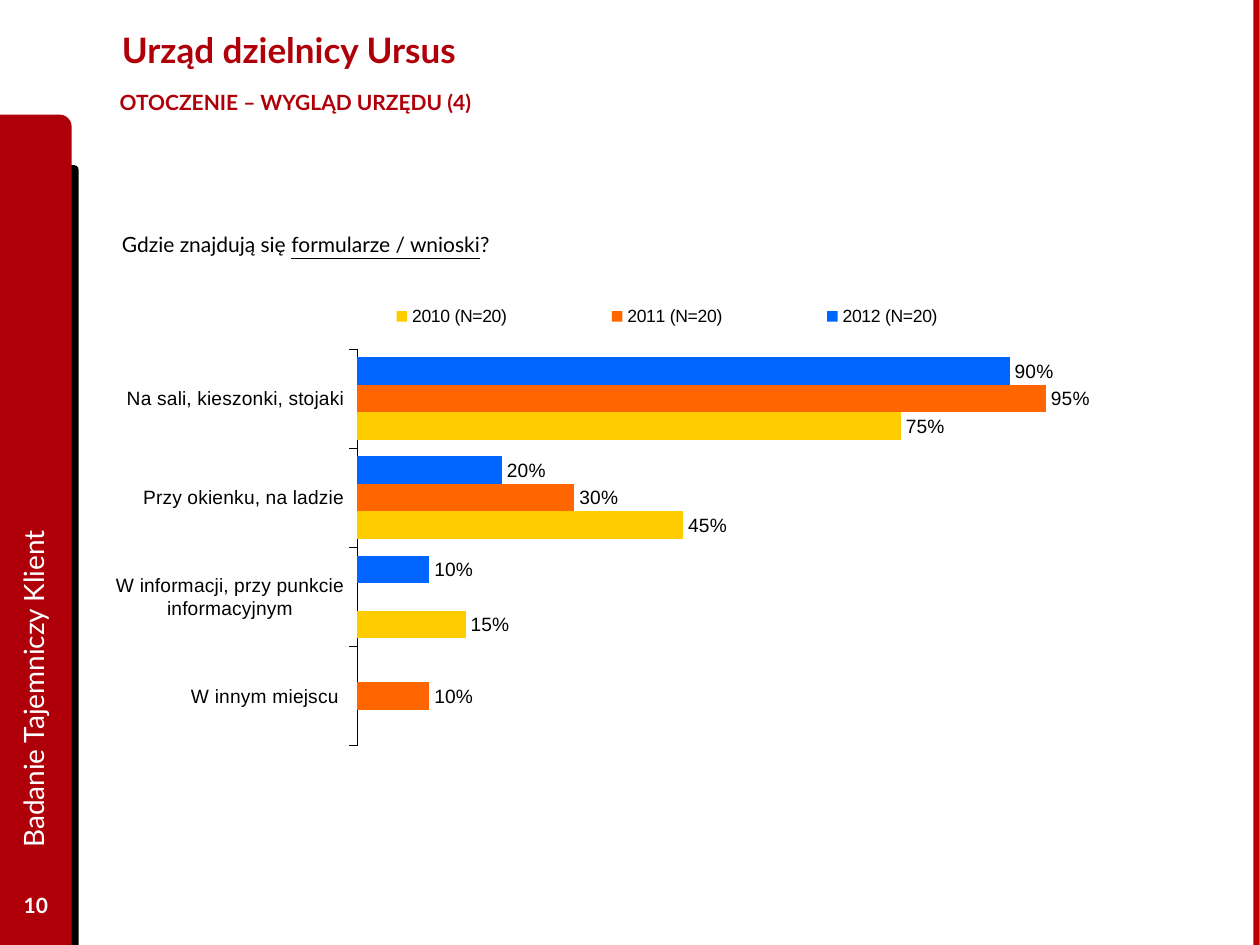
from lxml.etree import SubElement
from pptx import Presentation
from pptx.chart.data import CategoryChartData
from pptx.dml.color import RGBColor
from pptx.enum.chart import (XL_CHART_TYPE, XL_LABEL_POSITION, XL_LEGEND_POSITION,
                             XL_TICK_MARK)
from pptx.enum.shapes import MSO_SHAPE
from pptx.enum.text import MSO_ANCHOR, PP_ALIGN
from pptx.oxml import parse_xml
from pptx.oxml.ns import nsdecls, qn
from pptx.util import Pt

RED, BLACK, WHITE = "AF000A", "000000", "FFFFFF"
CATEGORIES = ["Na sali, kieszonki, stojaki", "Przy okienku, na ladzie",
              "W informacji, przy punkcie informacyjnym", "W innym miejscu "]
SERIES = [
    ("2012 (N=20)", [0.9, 0.2, 0.1, None], "0066FF"),
    ("2011 (N=20)", [0.95, 0.3, None, 0.1], "FF6600"),
    ("2010 (N=20)", [0.75, 0.45, 0.15, None], "FFCC00"),
]


def paint(color_format, color):
    color_format.rgb = RGBColor.from_string(color)


def manual_layout(x, y, width, height, inner=False):
    """Return a chart layout element placed by fractions of the chart area."""
    layout = parse_xml(f"<c:layout {nsdecls('c')}><c:manualLayout/></c:layout>")
    settings = [("layoutTarget", "inner")] if inner else []
    settings += [("xMode", "edge"), ("yMode", "edge"),
                 ("x", x), ("y", y), ("w", width), ("h", height)]
    for name, value in settings:
        SubElement(layout[0], qn(f"c:{name}")).set("val", str(value))
    return layout


class SlideBuilder:
    def __init__(self, slide, text_font="Lato", chart_font="Arial"):
        self.slide = slide
        self.text_font = text_font
        self.chart_font = chart_font

    def style(self, font, name, size, color, bold=False):
        font.name, font.size, font.bold = name, Pt(size), bold
        paint(font.color, color)

    def panel(self, kind, left, top, width, height, color):
        shape = self.slide.shapes.add_shape(kind, Pt(left), Pt(top), Pt(width), Pt(height))
        shape.shadow.inherit = False
        shape.fill.solid()
        paint(shape.fill.fore_color, color)
        shape.line.fill.background()

    def text(self, left, top, width, height, spans, size, color, bold=False,
             anchor=MSO_ANCHOR.TOP, align=PP_ALIGN.LEFT, wrap=True, side_inset=7.2,
             rotation=0):
        """Add one paragraph; spans are (text, underlined) pairs."""
        box = self.slide.shapes.add_textbox(Pt(left), Pt(top), Pt(width), Pt(height))
        box.rotation = rotation
        frame = box.text_frame
        frame.word_wrap = wrap
        frame.vertical_anchor = anchor
        frame.margin_left = frame.margin_right = Pt(side_inset)
        para = frame.paragraphs[0]
        para.alignment = align
        for content, underlined in spans:
            span = para.add_run()
            span.text = content
            self.style(span.font, self.text_font, size, color, bold)
            if underlined:
                span.font.underline = True

    def bar_chart(self, left, top, width, height, categories, series_rows):
        data = CategoryChartData(number_format="0%")
        data.categories = categories
        for name, values, _ in series_rows:
            data.add_series(name, values)
        chart = self.slide.shapes.add_chart(
            XL_CHART_TYPE.BAR_CLUSTERED, Pt(left), Pt(top), Pt(width), Pt(height), data).chart
        self.style(chart.font, self.chart_font, 11, BLACK)
        chart.has_title = False
        self.axes(chart)
        self.legend(chart)

        plot = chart.plots[0]
        plot.gap_width, plot.overlap = 60, 0
        plot.vary_by_categories = False
        for series, (_, _, color) in zip(plot.series, series_rows):
            series.format.fill.solid()
            paint(series.format.fill.fore_color, color)
            labels = series.data_labels
            labels.show_value = True
            labels.number_format, labels.number_format_is_linked = "0%", False
            labels.position = XL_LABEL_POSITION.OUTSIDE_END
            self.style(labels.font, self.chart_font, 11, BLACK)

        plot_area = chart.plots[0]._element.getparent()
        for layout in plot_area.findall(qn("c:layout")):
            plot_area.remove(layout)
        plot_area.insert(0, manual_layout(0.207, 0.113, 0.638, 0.887, inner=True))

    def axes(self, chart):
        category_axis, value_axis = chart.category_axis, chart.value_axis
        category_axis.reverse_order = True
        category_axis.has_major_gridlines = False
        category_axis.major_tick_mark = XL_TICK_MARK.OUTSIDE
        category_axis.format.line.width = Pt(0.23)
        paint(category_axis.format.line.color, BLACK)
        self.style(category_axis.tick_labels.font, self.chart_font, 11, BLACK)
        value_axis.minimum_scale, value_axis.maximum_scale = 0, 1
        value_axis.has_major_gridlines = False
        value_axis.visible = False

    def legend(self, chart):
        chart.has_legend = True
        legend = chart.legend
        legend.position = XL_LEGEND_POSITION.TOP
        legend.include_in_layout = False
        self.style(legend.font, self.chart_font, 10.1, BLACK)
        for layout in legend._element.findall(qn("c:layout")):
            legend._element.remove(layout)
        position = legend._element.find(qn("c:legendPos"))
        position.addnext(manual_layout(0.155, 0.01, 0.65, 0.06))


def main():
    deck = Presentation()
    deck.slide_width, deck.slide_height = Pt(720), Pt(540)
    page = SlideBuilder(deck.slides.add_slide(deck.slide_layouts[6]))

    page.panel(MSO_SHAPE.ROUND_1_RECTANGLE, 28, 94.3, 17, 445.7, BLACK)
    page.panel(MSO_SHAPE.ROUND_1_RECTANGLE, 0, 65.5, 41, 474.5, RED)
    page.panel(MSO_SHAPE.RECTANGLE, 716.2, 0, 3.6, 540, "BD0000")

    page.text(62.6, 2.2, 559.4, 51.8, [("Urząd dzielnicy Ursus", False)], 20, RED,
              bold=True, anchor=MSO_ANCHOR.MIDDLE)
    page.text(54, 47.5, 277.2, 23.8, [("OTOCZENIE – WYGLĄD URZĘDU (4)", False)], 12, RED,
              bold=True, wrap=False, side_inset=14.4)
    page.text(62.6, 128.9, 283.7, 21.6,
              [("Gdzie znajdują się ", False), ("formularze / wnioski", True), ("?", False)],
              12, BLACK)
    page.bar_chart(66.2, 170.6, 653, 255.6, CATEGORIES, SERIES)

    page.text(0, 502.6, 41, 28.8, [("10", False)], 12, WHITE, bold=True,
              anchor=MSO_ANCHOR.MIDDLE, align=PP_ALIGN.CENTER)
    page.text(-188.6, 265.7, 414.7, 36.7, [("Badanie Tajemniczy Klient", False)], 16, WHITE,
              anchor=MSO_ANCHOR.MIDDLE, rotation=270)
    deck.save("out.pptx")


if __name__ == "__main__":
    main()
